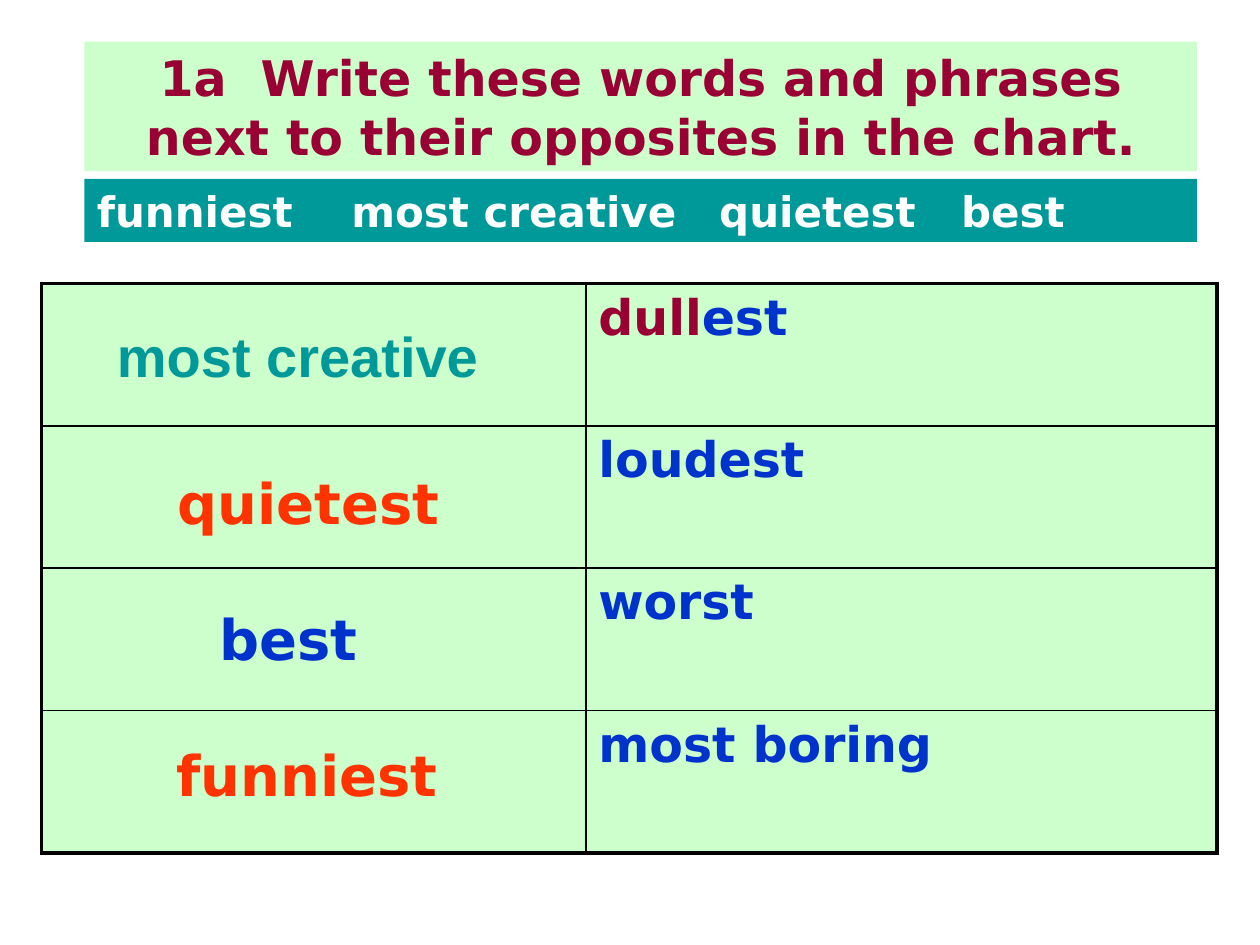
from lxml import etree
from pptx import Presentation
from pptx.dml.color import RGBColor
from pptx.enum.shapes import MSO_SHAPE
from pptx.enum.text import MSO_ANCHOR, PP_ALIGN
from pptx.oxml.ns import qn
from pptx.util import Inches, Pt

RECTANGLE = MSO_SHAPE.RECTANGLE
TOP = MSO_ANCHOR.TOP
LEFT, CENTER = PP_ALIGN.LEFT, PP_ALIGN.CENTER
FONT = "DejaVu Sans"
COLORS = {
    "mint": "CCFFCC",
    "teal": "009999",
    "maroon": "990033",
    "blue": "0033CC",
    "orange": "FF3300",
    "white": "FFFFFF",
    "black": "000000",
}
THICK, THIN = 2.25, 1
OPPOSITES = [
    [("dull", "maroon"), ("est", "blue")],
    [("loudest", "blue")],
    [("worst", "blue")],
    [("most boring", "blue")],
]
ANSWERS = [
    ("most creative", 0.83, 2.5, "teal", "Arial"),
    ("quietest", 1.31, 3.67, "orange", FONT),
    ("best", 1.64, 4.75, "blue", FONT),
    ("funniest", 1.3, 5.83, "orange", FONT),
]


def color(name):
    """Return the named colour."""
    return RGBColor.from_string(COLORS[name])


def write_text(paragraph, text, *, size, color_name, font=FONT, align=LEFT):
    """Add a bold run to a paragraph."""
    paragraph.alignment = align
    run = paragraph.add_run()
    run.text = text
    run.font.name = font
    run.font.size = Pt(size)
    run.font.bold = True
    run.font.color.rgb = color(color_name)


def add_banner(slide, box, text, *, fill, **text_format):
    """Add a filled bar with text and return its paragraph."""
    shape = slide.shapes.add_shape(RECTANGLE, *map(Inches, box))
    shape.shadow.inherit = False
    shape.fill.solid()
    shape.fill.fore_color.rgb = color(fill)
    shape.line.fill.background()
    frame = shape.text_frame
    frame.word_wrap = True
    frame.vertical_anchor = TOP
    paragraph = frame.paragraphs[0]
    write_text(paragraph, text, **text_format)
    return paragraph


def add_tab_stops(paragraph, positions):
    """Set left tab stops, in inches, on a paragraph."""
    properties = paragraph._p.get_or_add_pPr()
    tab_list = etree.SubElement(properties, qn("a:tabLst"))
    for position in positions:
        etree.SubElement(tab_list, qn("a:tab"), pos=str(Inches(position)), algn="l")


def style_cell(cell, widths):
    """Give a cell its borders and fill."""
    properties = cell._tc.get_or_add_tcPr()
    for side, width in widths.items():
        line = etree.SubElement(properties, qn(f"a:ln{side}"), w=str(Pt(width)))
        solid = etree.SubElement(line, qn("a:solidFill"))
        etree.SubElement(solid, qn("a:srgbClr"), val=COLORS["black"])
    cell.fill.solid()
    cell.fill.fore_color.rgb = color("mint")


def add_opposites_table(slide, box):
    """Add the chart with an empty column beside the given words."""
    rows = len(OPPOSITES)
    graphic = slide.shapes.add_table(rows, 2, *map(Inches, box))
    table = graphic.table
    table.first_row = table.horz_banding = False
    for column, width in zip(table.columns, (4.32, 5.01)):
        column.width = Inches(width)
    for index, parts in enumerate(OPPOSITES):
        table.rows[index].height = Inches(box[3] / rows)
        for column in range(2):
            style_cell(table.cell(index, column), {
                "L": THICK if column == 0 else THIN,
                "R": THICK if column == 1 else THIN,
                "T": THICK if index == 0 else THIN,
                "B": THICK if index == rows - 1 else THIN,
            })
        paragraph = table.cell(index, 1).text_frame.paragraphs[0]
        for text, color_name in parts:
            write_text(paragraph, text, size=28, color_name=color_name)


def add_answer(slide, box, text, **text_format):
    """Add an answer over the empty column."""
    frame = slide.shapes.add_textbox(*map(Inches, box)).text_frame
    frame.word_wrap = True
    write_text(frame.paragraphs[0], text, size=32, **text_format)


def main():
    """Build and save the slide."""
    presentation = Presentation()
    presentation.slide_width = Inches(10)
    presentation.slide_height = Inches(7.5)
    slide = presentation.slides.add_slide(presentation.slide_layouts[6])
    add_banner(
        slide, (0.67, 0.33, 8.83, 1.03),
        "1a  Write these words and phrases next to their opposites in the chart.",
        fill="mint", size=28, color_name="maroon", align=CENTER,
    )
    word_bank = add_banner(
        slide, (0.67, 1.42, 8.83, 0.5),
        "funniest\tmost creative\tquietest\tbest",
        fill="teal", size=24, color_name="white",
    )
    add_tab_stops(word_bank, (2.02, 4.94, 6.86))
    add_opposites_table(slide, (0.33, 2.25, 9.33, 4.52))
    for text, left, top, color_name, font in ANSWERS:
        add_answer(slide, (left, top, 3.5, 0.63), text, color_name=color_name, font=font)
    presentation.save("out.pptx")


if __name__ == "__main__":
    main()
